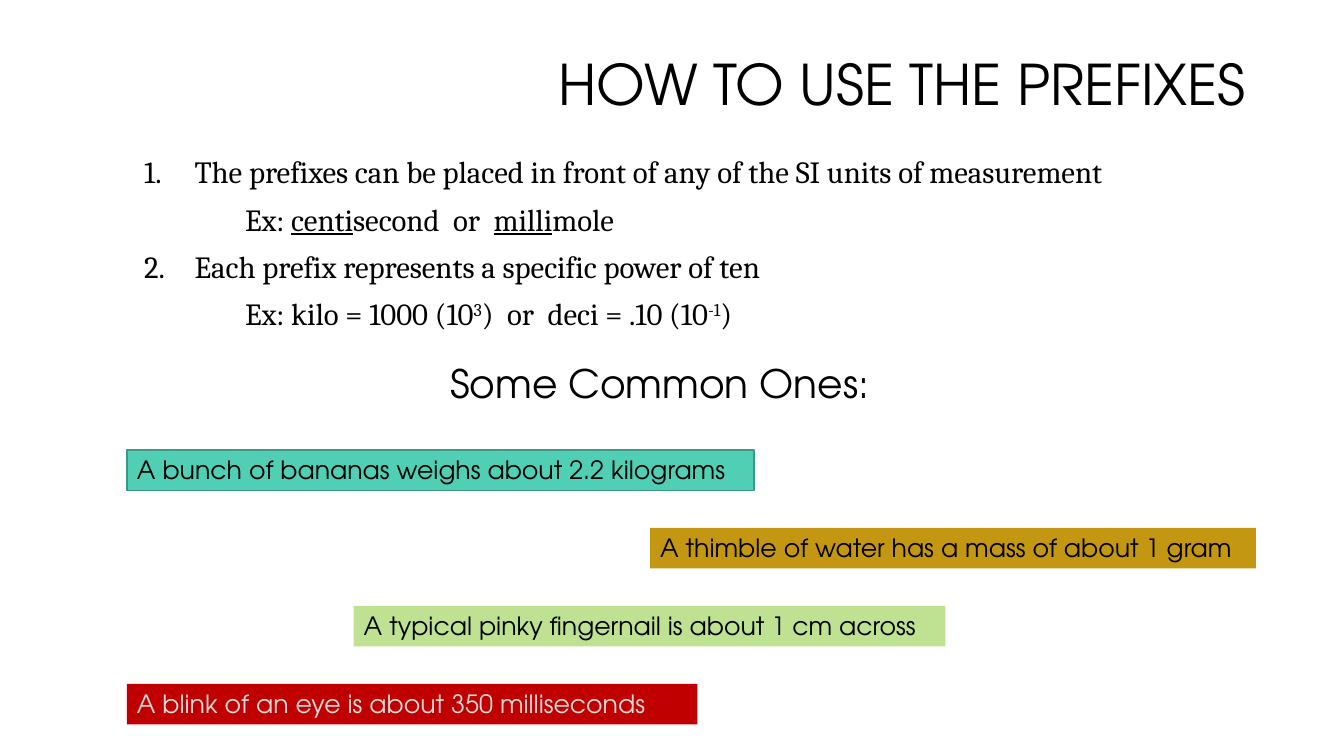
from lxml.etree import SubElement
from pptx import Presentation
from pptx.dml.color import RGBColor
from pptx.enum.shapes import MSO_SHAPE
from pptx.enum.text import MSO_ANCHOR, MSO_AUTO_SIZE, PP_ALIGN
from pptx.oxml.ns import qn
from pptx.util import Pt

COLORS = {
    "text": "000000",
    "pale text": "D9D9D9",
    "teal": "50CFB4",
    "teal edge": "3B9985",
    "gold": "C49712",
    "green": "BEE292",
    "red": "C00000",
}
HEADING_FONT = "TeX Gyre Adventor"
BODY_FONT = "Cambria"


def write(paragraph, text, size=18, font=HEADING_FONT, color="text",
          align=PP_ALIGN.LEFT, underline=False, raised=False):
    """Add one formatted run to the paragraph."""
    paragraph.alignment = align
    run = paragraph.add_run()
    run.text = text
    run.font.size = Pt(size)
    run.font.name = font
    run.font.color.rgb = RGBColor.from_string(COLORS[color])
    if underline:
        run.font.underline = True
    if raised:
        run.font._element.set("baseline", "30000")


def place(shape, left, top, width, height):
    shape.left, shape.top = Pt(left), Pt(top)
    shape.width, shape.height = Pt(width), Pt(height)


prs = Presentation()
prs.slide_width, prs.slide_height = Pt(960), Pt(540)
slide = prs.slides.add_slide(prs.slide_layouts[1])

# Title
title = slide.shapes.title
place(title, 218.9, 29.5, 678.2, 66.2)
title.text_frame.auto_size = MSO_AUTO_SIZE.NONE
title.text_frame.vertical_anchor = MSO_ANCHOR.MIDDLE
heading = title.text_frame.paragraphs[0]
heading.line_spacing = 0.9
write(heading, "HOW TO USE THE PREFIXES", size=40, align=PP_ALIGN.RIGHT)

# Numbered rules, each followed by an indented example
rules = [
    (1, [("The prefixes can be placed in front of any of the SI units of measurement", {})]),
    (None, [("Ex: ", {}), ("centi", {"underline": True}), ("second  or  ", {}),
            ("milli", {"underline": True}), ("mole", {})]),
    (2, [("Each prefix represents a specific power of ten", {})]),
    (None, [("Ex: kilo = 1000 (10", {}), ("3", {"raised": True}),
            (")  or  deci = .10 (10", {}), ("-1", {"raised": True}), (")", {})]),
]
body = slide.placeholders[1]
place(body, 95.8, 108.7, 851.8, 144.7)
body.text_frame.auto_size = MSO_AUTO_SIZE.NONE
body.text_frame.vertical_anchor = MSO_ANCHOR.TOP
for index, (number, pieces) in enumerate(rules):
    rule = body.text_frame.add_paragraph() if index else body.text_frame.paragraphs[0]
    properties = rule._p.get_or_add_pPr()
    properties.set("marL", str(Pt(36 if number else 72)))
    properties.set("indent", str(Pt(-36 if number else 0)))
    if number:
        SubElement(properties, qn("a:buFont"), typeface=BODY_FONT)
        SubElement(properties, qn("a:buAutoNum"), type="arabicPeriod", startAt=str(number))
    else:
        SubElement(properties, qn("a:buNone"))
    rule.line_spacing = 0.9
    rule.space_before = Pt(10 if index else 0)
    for text, style in pieces:
        write(rule, text, size=22, font=BODY_FONT, **style)

# Subheading
subheading = slide.shapes.add_textbox(Pt(314.6), Pt(253.4), Pt(316.1), Pt(41))
subheading.text_frame.word_wrap = True
subheading.text_frame.auto_size = MSO_AUTO_SIZE.SHAPE_TO_FIT_TEXT
write(subheading.text_frame.paragraphs[0], "Some Common Ones:", size=28)

# Everyday examples, evenly spaced down the slide
examples = [
    ("A bunch of bananas weighs about 2.2 kilograms", 90.7, 447.8, "teal", "teal edge", "text"),
    ("A thimble of water has a mass of about 1 gram", 464.4, 432.7, "gold", None, "text"),
    ("A typical pinky fingernail is about 1 cm across", 252.7, 422.6, "green", None, "text"),
    ("A blink of an eye is about 350 milliseconds", 90.7, 407.5, "red", None, "pale text"),
]
for row, (text, left, width, fill, edge, color) in enumerate(examples):
    example = slide.shapes.add_shape(
        MSO_SHAPE.RECTANGLE, Pt(left), Pt(321.3 + 55.7 * row), Pt(width), Pt(29))
    example.shadow.inherit = False
    example.fill.solid()
    example.fill.fore_color.rgb = RGBColor.from_string(COLORS[fill])
    if edge:
        example.line.color.rgb = RGBColor.from_string(COLORS[edge])
        example.line.width = Pt(1)
    else:
        example.line.fill.background()
    example.text_frame.word_wrap = True
    example.text_frame.auto_size = MSO_AUTO_SIZE.SHAPE_TO_FIT_TEXT
    example.text_frame.vertical_anchor = MSO_ANCHOR.TOP
    write(example.text_frame.paragraphs[0], text, color=color)

prs.save("out.pptx")
